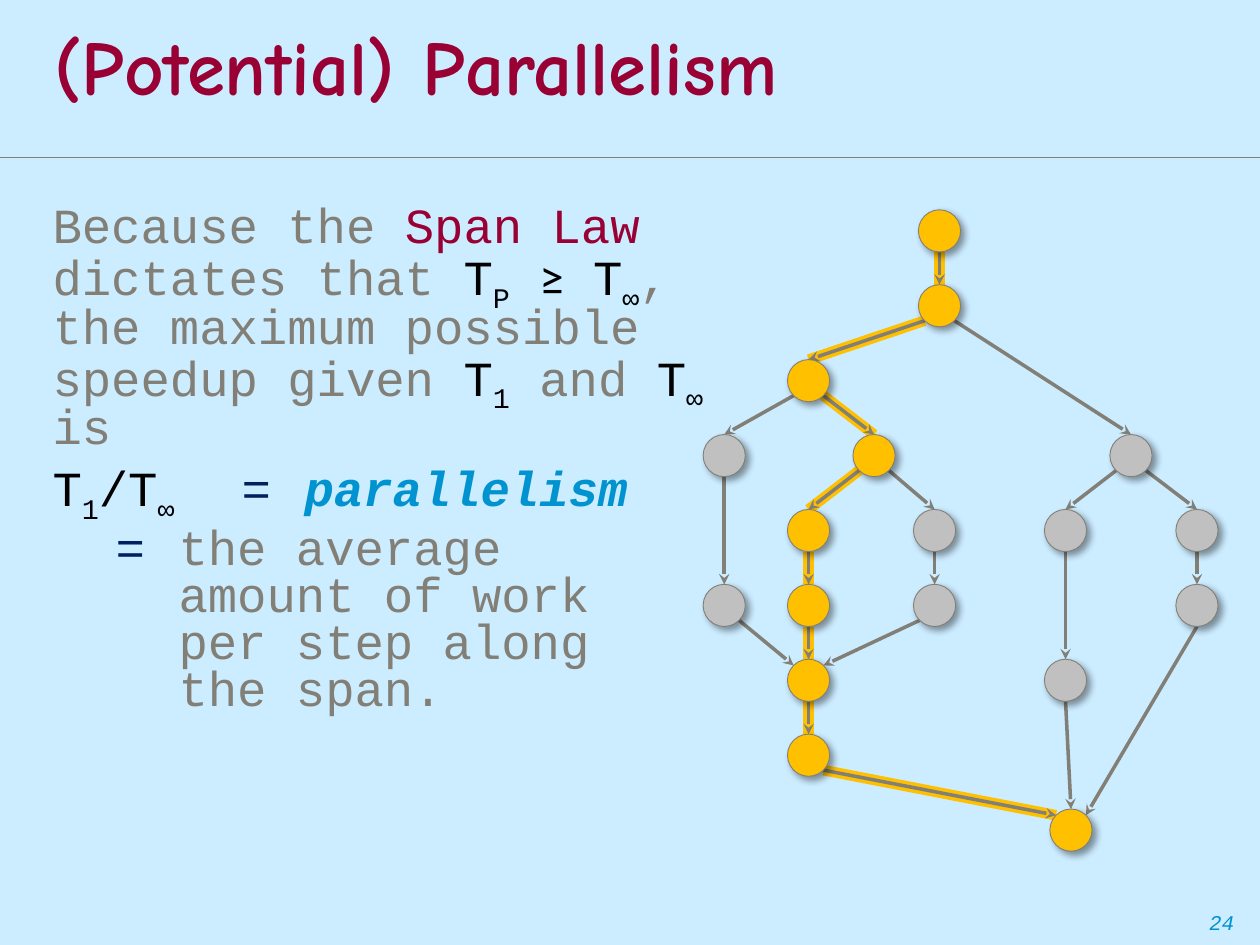
from dataclasses import dataclass
from math import sqrt

from lxml.etree import SubElement
from pptx import Presentation
from pptx.dml.color import RGBColor
from pptx.enum.shapes import MSO_CONNECTOR, MSO_SHAPE
from pptx.enum.text import MSO_ANCHOR, PP_ALIGN
from pptx.oxml.ns import qn
from pptx.util import Cm, Pt


@dataclass(frozen=True)
class Theme:
    background: str = "CCECFF"
    crimson: str = "990033"
    gray: str = "827F77"
    black: str = "000000"
    navy: str = "002060"
    blue: str = "0093D0"
    gold: str = "FFC000"
    silver: str = "C0C0C0"
    title_font: str = "Comic Neue"
    body_font: str = "Courier New"
    symbol_font: str = "Calibri"
    title_size: int = 44
    body_size: int = 28
    number_size: int = 12


THEME = Theme()

# Body text: (text, colour, style); a style is "sub", "symbol" or "strong".
BODY = [
    [
        ("Because the ", THEME.gray, ""), ("Span Law ", THEME.crimson, ""),
        ("dictates that", THEME.gray, ""), (" T", THEME.black, ""),
        ("P", THEME.black, "sub"), (" ", THEME.black, ""),
        ("≥", THEME.black, "symbol"),
        (" T", THEME.black, ""), ("∞", THEME.black, "sub"),
        (", the maximum possible speedup given ", THEME.gray, ""),
        ("T", THEME.black, ""), ("1", THEME.black, "sub"),
        (" and ", THEME.gray, ""),
        ("T", THEME.black, ""), ("∞", THEME.black, "sub"),
        (" is", THEME.gray, ""),
    ],
    [
        ("T", THEME.black, ""), ("1", THEME.black, "sub"),
        ("/T", THEME.black, ""), ("∞ \t", THEME.black, "sub"),
        ("=\t", THEME.navy, ""), ("parallelism", THEME.blue, "strong"),
    ],
    [
        ("\t=\t", THEME.navy, ""),
        ("the average \n\t\tamount of work \n\t\tper step along \n\t\tthe span.",
         THEME.gray, ""),
    ],
]

# Graph nodes: name -> (centre from the left in cm, row)
NODES = {
    "root": (4.76, 0), "fork": (4.76, 1), "left": (2.12, 2),
    "outer": (0.42, 3), "middle": (3.44, 3), "right": (8.62, 3),
    "first": (2.12, 4), "side": (4.66, 4), "inner": (7.3, 4), "far": (9.95, 4),
    "outer end": (0.42, 5), "second": (2.12, 5), "side end": (4.66, 5),
    "far end": (9.95, 5), "join": (2.12, 6), "inner end": (7.3, 6),
    "last": (2.12, 7), "finish": (7.41, 8),
}
# Edges: (start node, side it leaves, end node, side it enters)
SPAN_EDGES = [
    ("root", "S", "fork", "N"), ("fork", "SW", "left", "N"),
    ("left", "SE", "middle", "N"), ("middle", "SW", "first", "N"),
    ("first", "S", "second", "N"), ("second", "S", "join", "N"),
    ("join", "S", "last", "N"), ("last", "SE", "finish", "NW"),
]
OTHER_EDGES = [
    ("fork", "SE", "right", "N"), ("left", "SW", "outer", "N"),
    ("outer", "S", "outer end", "N"), ("middle", "SE", "side", "N"),
    ("outer end", "SE", "join", "NW"), ("right", "SE", "far", "N"),
    ("side end", "SW", "join", "NE"), ("side", "S", "side end", "N"),
    ("right", "SW", "inner", "N"), ("inner", "S", "inner end", "N"),
    ("far", "S", "far end", "N"), ("far end", "S", "finish", "NE"),
    ("inner end", "S", "finish", "N"),
]
SPAN_NODES = {name for edge in SPAN_EDGES for name in (edge[0], edge[2])}
DIAGONAL = 1 / sqrt(2)
SIDES = {
    "N": (0, -1), "S": (0, 1),
    "NW": (-DIAGONAL, -DIAGONAL), "NE": (DIAGONAL, -DIAGONAL),
    "SW": (-DIAGONAL, DIAGONAL), "SE": (DIAGONAL, DIAGONAL),
}
DIAMETER = 0.85
ROW_PITCH = 1.51


def rgb(colour):
    return RGBColor.from_string(colour)


def add_frame(page, box, anchor):
    frame = page.shapes.add_textbox(*map(Cm, box)).text_frame
    frame.word_wrap = True
    frame.vertical_anchor = anchor
    return frame


def set_font(font, name, size, colour):
    font.name = name
    font.size = Pt(size)
    font.color.rgb = rgb(colour)


def add_line(shapes, start, end, colour, width, arrow=False):
    """Draw a straight line between two points in cm."""
    line = shapes.add_connector(MSO_CONNECTOR.STRAIGHT, *map(Cm, (*start, *end)))
    line.line.color.rgb = rgb(colour)
    line.line.width = Pt(width)
    if arrow:
        SubElement(line.line._get_or_add_ln(), qn("a:tailEnd"), type="stealth")
    SubElement(line._element.spPr, qn("a:effectLst"))


def add_title(page, box):
    para = add_frame(page, box, MSO_ANCHOR.MIDDLE).paragraphs[0]
    para.text = "(Potential) Parallelism"
    para.line_spacing = 0.86
    set_font(para.font, THEME.title_font, THEME.title_size, THEME.crimson)
    para.font.bold = True


def add_span(para, text, colour, style):
    for index, piece in enumerate(text.split("\n")):
        if index:
            para.add_line_break()
        span = para.add_run()
        span.text = piece
        span.font.color.rgb = rgb(colour)
        if style == "sub":
            span.font._element.set("baseline", "-25000")
        elif style == "symbol":
            span.font.name = THEME.symbol_font
        elif style == "strong":
            span.font.bold = span.font.italic = True


def add_body(page, box):
    frame = add_frame(page, box, MSO_ANCHOR.TOP)
    for index, spans in enumerate(BODY):
        para = frame.add_paragraph() if index else frame.paragraphs[0]
        para.line_spacing = 0.8
        para.space_before = Pt(0.2 * THEME.body_size)
        tabs = SubElement(para._p.get_or_add_pPr(), qn("a:tabLst"))
        for stop in range(1, 5):
            SubElement(tabs, qn("a:tab"), pos=str(Cm(1.27 * stop)), algn="l")
        set_font(para.font, THEME.body_font, THEME.body_size, THEME.gray)
        for span in spans:
            add_span(para, *span)


def add_shadow(shape):
    effects = SubElement(shape._element.spPr, qn("a:effectLst"))
    shadow = SubElement(effects, qn("a:outerShdw"), blurRad=str(Pt(4)),
                        dist=str(Pt(3)), dir=str(45 * 60000), rotWithShape="0")
    colour = SubElement(shadow, qn("a:srgbClr"), val=THEME.black)
    SubElement(colour, qn("a:alpha"), val="40000")


def add_graph(page, left, top):
    """Draw the task graph, with its longest path in gold."""
    shapes = page.shapes.add_group_shape().shapes
    radius = DIAMETER / 2

    def point(name, side):
        x, row = NODES[name]
        across, down = SIDES[side]
        return (left + x + radius * across,
                top + radius + row * ROW_PITCH + radius * down)

    def add_edges(edges, *look):
        for start, leaves, end, enters in edges:
            add_line(shapes, point(start, leaves), point(end, enters), *look)

    add_edges(SPAN_EDGES, THEME.gold, 6)
    add_edges(SPAN_EDGES + OTHER_EDGES, THEME.gray, 2, True)
    for name, (x, row) in NODES.items():
        box = (left + x - radius, top + row * ROW_PITCH, DIAMETER, DIAMETER)
        node = shapes.add_shape(MSO_SHAPE.OVAL, *map(Cm, box))
        node.fill.solid()
        node.fill.fore_color.rgb = rgb(THEME.gold if name in SPAN_NODES else THEME.silver)
        node.line.color.rgb = rgb(THEME.gray)
        node.line.width = Pt(0.5)
        add_shadow(node)


def add_page_number(page, box):
    frame = add_frame(page, box, MSO_ANCHOR.BOTTOM)
    frame.margin_right = Cm(0.52)
    para = frame.paragraphs[0]
    para.text = "24"
    para.alignment = PP_ALIGN.RIGHT
    set_font(para.font, THEME.body_font, THEME.number_size, THEME.blue)
    para.font.italic = True


def main():
    deck = Presentation()
    deck.slide_width, deck.slide_height = Cm(25.4), Cm(19.05)
    page = deck.slides.add_slide(deck.slide_layouts[6])
    page.background.fill.solid()
    page.background.fill.fore_color.rgb = rgb(THEME.background)
    add_page_number(page, (0, 18.21, 25.4, 0.76))
    add_line(page.shapes, (0, 3.18), (25.4, 3.18), THEME.gray, 0.75)
    add_title(page, (0.84, 0.18, 24.56, 2.54))
    add_body(page, (0.81, 4.03, 15.06, 10.64))
    add_graph(page, 14.18, 4.23)
    deck.save("out.pptx")


if __name__ == "__main__":
    main()
